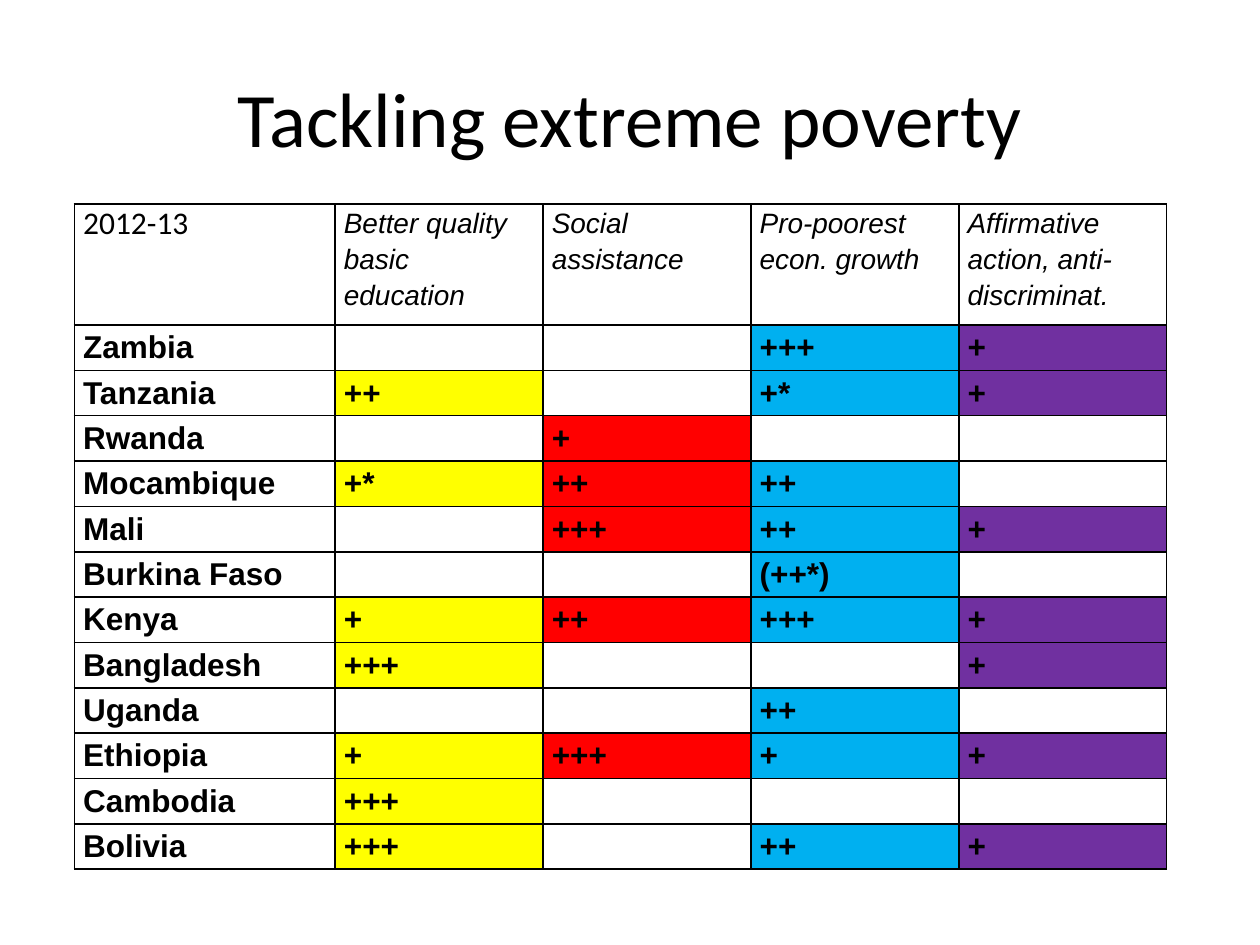
from lxml import etree
from pptx import Presentation
from pptx.dml.color import RGBColor
from pptx.enum.text import MSO_ANCHOR, PP_ALIGN
from pptx.oxml.ns import qn
from pptx.util import Inches, Pt

CENTER = PP_ALIGN.CENTER
MIDDLE = MSO_ANCHOR.MIDDLE

BLACK = RGBColor(0x00, 0x00, 0x00)
YELLOW = RGBColor(0xFF, 0xFF, 0x00)
RED = RGBColor(0xFF, 0x00, 0x00)
BLUE = RGBColor(0x00, 0xB0, 0xF0)
PURPLE = RGBColor(0x70, 0x30, 0xA0)

COLUMN_FILLS = [None, YELLOW, RED, BLUE, PURPLE]
COLUMN_WIDTHS = [2.07] + [1.65] * 4
HEADER_HEIGHT = 0.96
ROW_HEIGHT = 0.36

ROWS = [
    ["2012-13", "Better quality basic\neducation", "Social assistance",
     "Pro-poorest econ. growth", "Affirmative\naction, anti-discriminat."],
    ["Zambia", "", "", "+++", "+"],
    ["Tanzania", "++", "", "+*", "+"],
    ["Rwanda", "", "+", "", ""],
    ["Mocambique", "+*", "++", "++", ""],
    ["Mali", "", "+++", "++", "+"],
    ["Burkina Faso", "", "", "(++*)", ""],
    ["Kenya", "+", "++", "+++", "+"],
    ["Bangladesh", "+++", "", "", "+"],
    ["Uganda", "", "", "++", ""],
    ["Ethiopia", "+", "+++", "+", "+"],
    ["Cambodia", "+++", "", "", ""],
    ["Bolivia", "+++", "", "++", "+"],
]


def add_borders(cell):
    properties = cell._tc.get_or_add_tcPr()
    for side in ("a:lnL", "a:lnR", "a:lnT", "a:lnB"):
        line = etree.SubElement(properties, qn(side), w=str(Pt(1)))
        fill = etree.SubElement(line, qn("a:solidFill"))
        etree.SubElement(fill, qn("a:srgbClr"), val=str(BLACK))


def set_font(font, name, size, bold=False, italic=False):
    font.name = name
    font.size = Pt(size)
    font.bold = bold
    font.italic = italic
    font.color.rgb = BLACK


presentation = Presentation()
presentation.slide_width = Inches(10)
presentation.slide_height = Inches(7.5)
slide = presentation.slides.add_slide(presentation.slide_layouts[6])

title = slide.shapes.add_textbox(Inches(0.5), Inches(0.3), Inches(9), Inches(1.25))
title_frame = title.text_frame
title_frame.word_wrap = True
title_frame.vertical_anchor = MIDDLE
title_frame.text = "Tackling extreme poverty"
title_paragraph = title_frame.paragraphs[0]
title_paragraph.alignment = CENTER
set_font(title_paragraph.font, "Calibri", 44)

table_height = HEADER_HEIGHT + ROW_HEIGHT * (len(ROWS) - 1)
table = slide.shapes.add_table(
    len(ROWS), len(COLUMN_WIDTHS), Inches(0.59), Inches(1.62),
    Inches(sum(COLUMN_WIDTHS)), Inches(table_height)).table
table.horz_banding = False
table.first_row = False
for column, width in zip(table.columns, COLUMN_WIDTHS):
    column.width = Inches(width)

for row_index, texts in enumerate(ROWS):
    is_header = row_index == 0
    table.rows[row_index].height = Inches(HEADER_HEIGHT if is_header else ROW_HEIGHT)
    for column_index, text in enumerate(texts):
        cell = table.cell(row_index, column_index)
        cell.margin_left = cell.margin_right = Inches(0.07)
        cell.margin_top = cell.margin_bottom = 0
        add_borders(cell)

        fill_color = COLUMN_FILLS[column_index]
        if fill_color and text and not is_header:
            cell.fill.solid()
            cell.fill.fore_color.rgb = fill_color
        else:
            cell.fill.background()

        cell.text = text
        for paragraph in cell.text_frame.paragraphs:
            if is_header and column_index == 0:
                set_font(paragraph.font, "Calibri", 18)
                continue
            paragraph.line_spacing = 1.15
            if is_header:
                set_font(paragraph.font, "Arial", 16, italic=True)
            else:
                set_font(paragraph.font, "Arial", 18, bold=True)

presentation.save("out.pptx")
